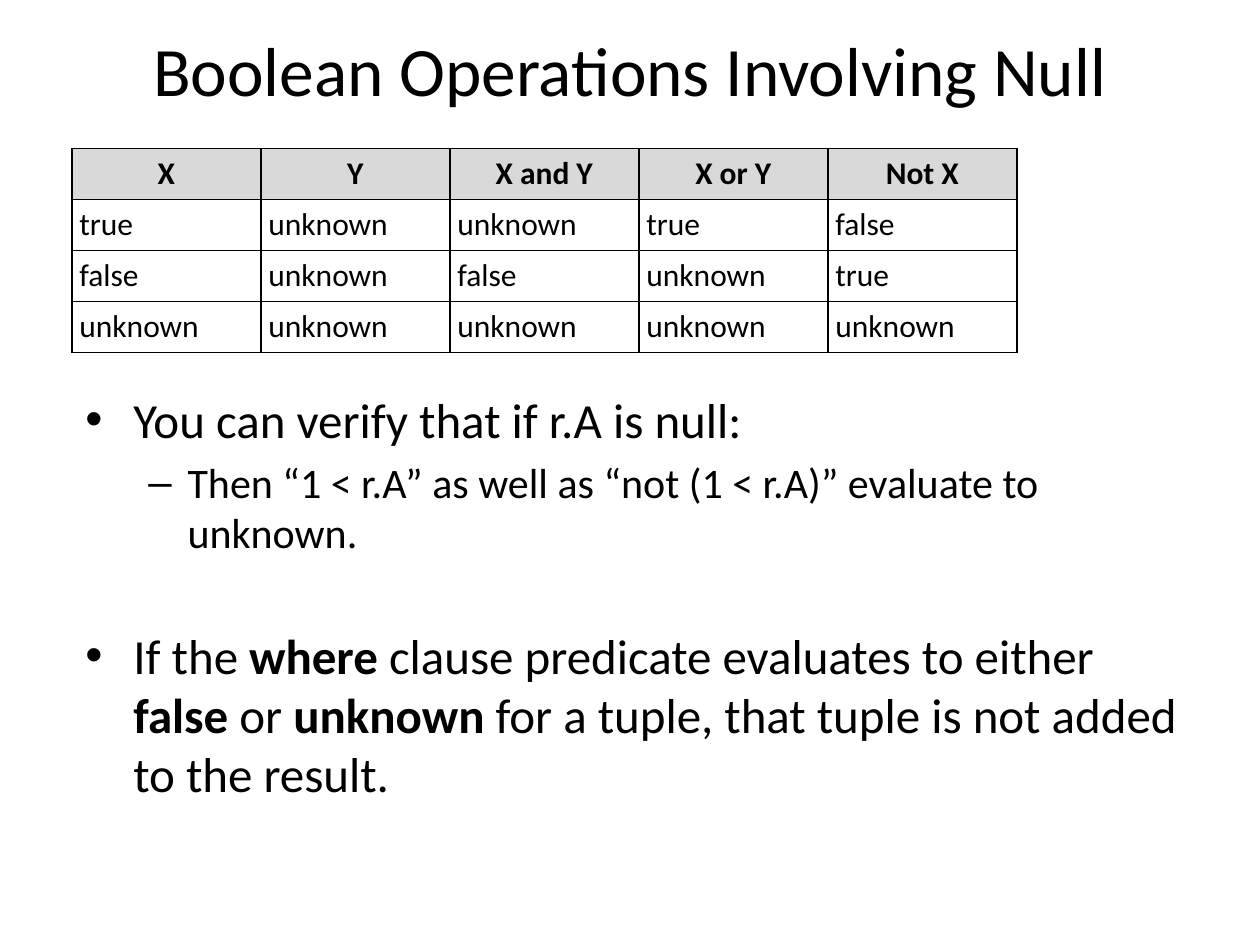
"""Build the slide on Boolean operations involving null."""
from dataclasses import dataclass

from lxml.etree import SubElement
from pptx import Presentation
from pptx.dml.color import RGBColor
from pptx.enum.text import MSO_ANCHOR as Anchor, PP_ALIGN as Align
from pptx.oxml.ns import qn
from pptx.util import Inches, Pt

BLACK = RGBColor(0x00, 0x00, 0x00)
WHITE = RGBColor(0xFF, 0xFF, 0xFF)
HEADER_GREY = RGBColor(0xD9, 0xD9, 0xD9)
FONT = "Calibri"

TRUTH_TABLE = (
    ("X", "Y", "X and Y", "X or Y", "Not X"),
    ("true", "unknown", "unknown", "true", "false"),
    ("false", "unknown", "false", "unknown", "true"),
    ("unknown", "unknown", "unknown", "unknown", "unknown"),
)


@dataclass(frozen=True)
class Point:
    runs: tuple[str, ...]
    level: int = 0
    space_before: float = 0


POINTS = (
    Point(("You can verify that if r.A is null:",)),
    Point(("Then “1 < r.A” as well as “not (1 < r.A)” evaluate to unknown.",), 1, 4.8),
    Point(("If the ", "where ", "clause predicate evaluates to either ", "false ", "or ",
           "unknown ", "for a tuple, that tuple is not added to the result."), 0, 39),
)


@dataclass(frozen=True)
class LevelStyle:
    size: float
    bullet: str
    margin: float
    hanging: float


LEVELS = (LevelStyle(28, "•", 0.38, 0.38), LevelStyle(24, "–", 0.81, 0.31))


def write(paragraph, text: str, *, size: float, bold: bool = False, align=Align.LEFT) -> None:
    paragraph.alignment = align
    run = paragraph.add_run()
    run.text = text
    run.font.name = FONT
    run.font.size = Pt(size)
    run.font.bold = bold
    run.font.color.rgb = BLACK


def add_text_frame(slide, left: float, top: float, width: float, height: float, anchor=Anchor.TOP):
    frame = slide.shapes.add_textbox(*map(Inches, (left, top, width, height))).text_frame
    frame.word_wrap = True
    frame.vertical_anchor = anchor
    return frame


def border_cell(cell) -> None:
    properties = cell._tc.get_or_add_tcPr()
    for position, side in enumerate(("a:lnL", "a:lnR", "a:lnT", "a:lnB")):
        line = SubElement(properties, qn(side), w=str(Pt(1)))
        SubElement(SubElement(line, qn("a:solidFill")), qn("a:srgbClr"), val=str(BLACK))
        properties.insert(position, line)


def add_truth_table(slide) -> None:
    rows, columns = len(TRUTH_TABLE), len(TRUTH_TABLE[0])
    table = slide.shapes.add_table(
        rows, columns, Inches(0.57), Inches(1.18), Inches(1.5 * columns), Inches(1.62)).table
    for row, values in enumerate(TRUTH_TABLE):
        header = row == 0
        for column, value in enumerate(values):
            cell = table.cell(row, column)
            cell.margin_left = cell.margin_right = Inches(0.06)
            cell.margin_top = cell.margin_bottom = Inches(0.05)
            cell.fill.solid()
            cell.fill.fore_color.rgb = HEADER_GREY if header else WHITE
            border_cell(cell)
            write(cell.text_frame.paragraphs[0], value, size=18, bold=header,
                  align=Align.CENTER if header else Align.LEFT)


def add_point(paragraph, point: Point) -> None:
    style = LEVELS[point.level]
    paragraph.level = point.level
    paragraph.space_before = Pt(point.space_before)
    properties = paragraph._p.get_or_add_pPr()
    properties.set("marL", str(Inches(style.margin)))
    properties.set("indent", str(-Inches(style.hanging)))
    SubElement(properties, qn("a:buFont"), typeface="Arial")
    SubElement(properties, qn("a:buChar"), char=style.bullet)
    for index, text in enumerate(point.runs):
        write(paragraph, text, size=style.size, bold=index % 2 == 1)


def main() -> None:
    deck = Presentation()
    deck.slide_width, deck.slide_height = Inches(10), Inches(7.5)
    slide = deck.slides.add_slide(deck.slide_layouts[6])

    title = add_text_frame(slide, 0.5, 0.3, 9, 0.5, Anchor.MIDDLE)
    write(title.paragraphs[0], "Boolean Operations Involving Null", size=39.6, align=Align.CENTER)
    add_truth_table(slide)
    body = add_text_frame(slide, 0.58, 3.04, 8.92, 4.25)
    for index, point in enumerate(POINTS):
        add_point(body.add_paragraph() if index else body.paragraphs[0], point)

    deck.save("out.pptx")


if __name__ == "__main__":
    main()
